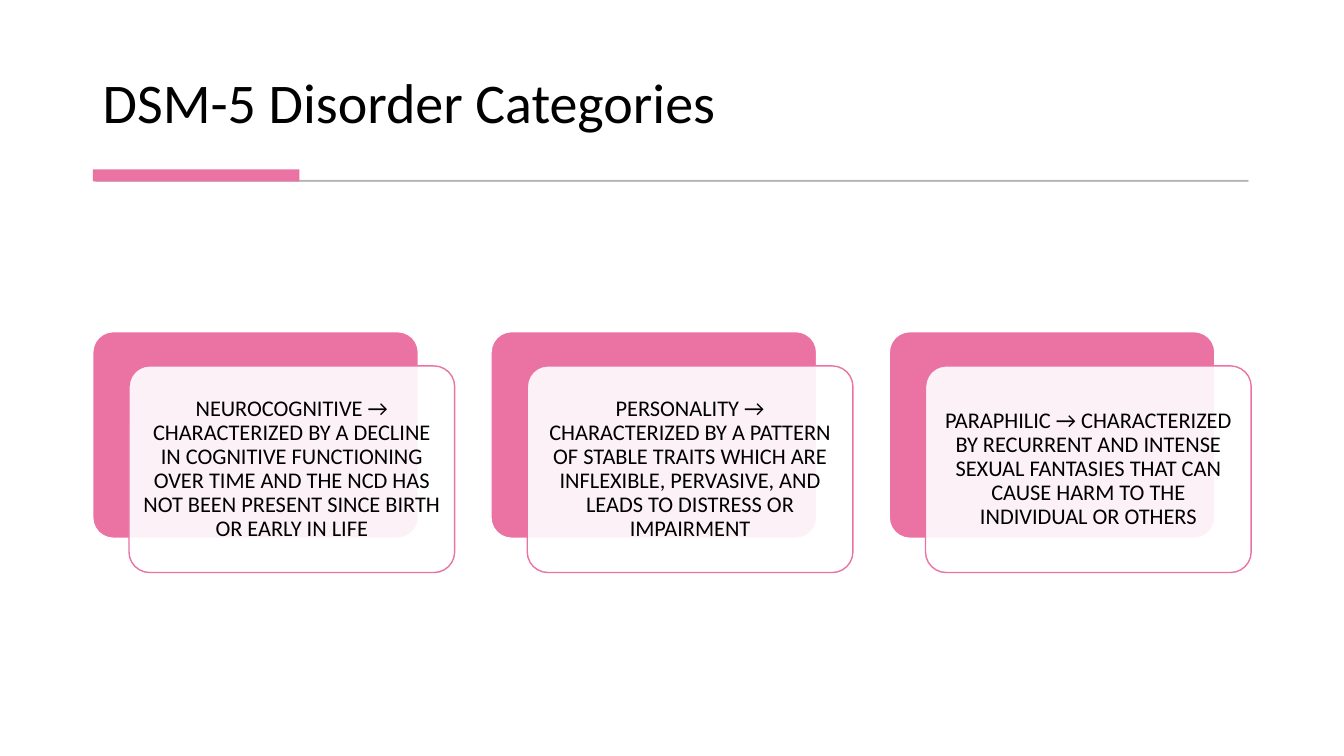
from lxml import etree
from pptx import Presentation
from pptx.dml.color import RGBColor
from pptx.enum.shapes import MSO_SHAPE
from pptx.enum.text import MSO_ANCHOR, PP_ALIGN
from pptx.oxml.ns import qn
from pptx.util import Inches, Pt

COLORS = {"pink": "EA73A4", "white": "FFFFFF", "black": "000000", "gray": "595959"}

CATEGORIES = [
    "NEUROCOGNITIVE → CHARACTERIZED BY A DECLINE IN COGNITIVE FUNCTIONING "
    "OVER TIME AND THE NCD HAS NOT BEEN PRESENT SINCE BIRTH OR EARLY IN LIFE",
    "PERSONALITY → CHARACTERIZED BY A PATTERN OF STABLE TRAITS WHICH ARE "
    "INFLEXIBLE, PERVASIVE, AND LEADS TO DISTRESS OR IMPAIRMENT",
    "PARAPHILIC → CHARACTERIZED BY RECURRENT AND INTENSE SEXUAL FANTASIES "
    "THAT CAN CAUSE HARM TO THE INDIVIDUAL OR OTHERS",
]


def add_box(kind, left, top, width, height, fill, line=None, line_width=1, alpha=100, line_alpha=100):
    s = slide.shapes.add_shape(kind, Inches(left), Inches(top), Inches(width), Inches(height))
    s.shadow.inherit = False
    s.fill.solid()
    s.fill.fore_color.rgb = RGBColor.from_string(COLORS[fill])
    if line:
        s.line.color.rgb = RGBColor.from_string(COLORS[line])
        s.line.width = Pt(line_width)
    else:
        s.line.fill.background()
    colors = list(s._element.spPr.iter(qn("a:srgbClr")))
    for color, percent in zip(colors, (alpha, line_alpha)):
        if percent < 100:
            etree.SubElement(color, qn("a:alpha")).set("val", str(percent * 1000))
    if kind == MSO_SHAPE.ROUNDED_RECTANGLE:
        s.adjustments[0] = 0.1
    return s


def write(tf, text, size, anchor, align):
    tf.word_wrap = True
    tf.vertical_anchor = anchor
    p = tf.paragraphs[0]
    p.text = text
    p.alignment = align
    p.line_spacing = 0.9
    p.font.name = "Calibri"
    p.font.size = Pt(size)
    p.font.color.rgb = RGBColor.from_string(COLORS["black"])


prs = Presentation()
prs.slide_width = Inches(13.33)
prs.slide_height = Inches(7.5)
slide = prs.slides.add_slide(prs.slide_layouts[6])

title = slide.shapes.add_textbox(Inches(0.92), Inches(0.28), Inches(11.49), Inches(1.11))
write(title.text_frame, "DSM-5 Disorder Categories", 40, MSO_ANCHOR.BOTTOM, PP_ALIGN.LEFT)

add_box(MSO_SHAPE.RECTANGLE, 0.95, 1.79, 11.43, 0.01, "gray", "gray", 0.75, 30, 30)
add_box(MSO_SHAPE.RECTANGLE, 0.92, 1.68, 2.05, 0.12, "pink")

for i, category in enumerate(CATEGORIES):
    left = 0.92 + 3.95 * i
    add_box(MSO_SHAPE.ROUNDED_RECTANGLE, left, 3.29, 3.23, 2.05, "pink", "white")
    card = add_box(MSO_SHAPE.ROUNDED_RECTANGLE, left + 0.36, 3.63, 3.23, 2.05, "white", "pink", alpha=90)
    tf = card.text_frame
    tf.margin_left = tf.margin_right = tf.margin_top = tf.margin_bottom = Inches(0.07)
    write(tf, category, 16, MSO_ANCHOR.MIDDLE, PP_ALIGN.CENTER)

prs.save("out.pptx")
